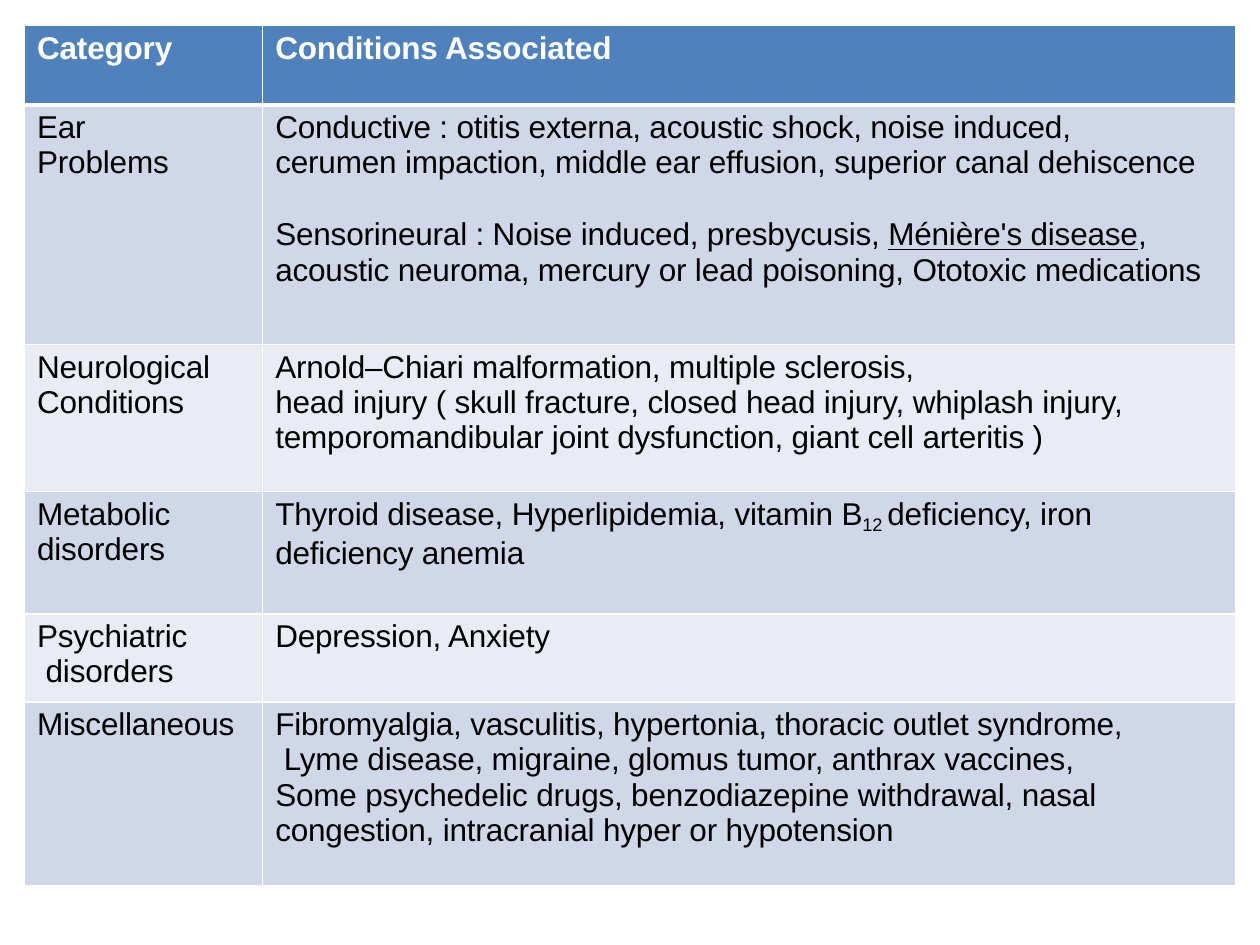
"""Build a slide with a table of categories and their associated conditions."""
from lxml import etree
from pptx import Presentation
from pptx import util as u
from pptx.dml.color import RGBColor
from pptx.oxml.ns import qn

Pt = u.Pt


def paint(fill, tone):
    fill.solid()
    fill.fore_color.rgb = RGBColor.from_string(tone)


def edge(cell, side, width):
    line = etree.SubElement(cell._tc.get_or_add_tcPr(), qn("a:ln" + side), w=str(Pt(width)))
    fill = etree.SubElement(line, qn("a:solidFill"))
    etree.SubElement(fill, qn("a:srgbClr"), val="FFFFFF")


rows = [
    (45.4, "Category", "Conditions Associated"),
    (136.8, "Ear\nProblems",
     "Conductive : otitis externa, acoustic shock, noise induced,\n"
     "cerumen impaction, middle ear effusion, superior canal dehiscence\n"
     "Sensorineural : Noise induced, presbycusis, |Ménière's disease|,|\v|"
     "acoustic neuroma, mercury or lead poisoning, Ototoxic medications"),
    (84.2, "Neurological\nConditions",
     "Arnold–Chiari malformation, multiple sclerosis,\n"
     "head injury ( skull fracture, closed head injury, whiplash injury,\n"
     "temporomandibular joint dysfunction, giant cell arteritis )"),
    (69.8, "Metabolic\ndisorders",
     "Thyroid disease, Hyperlipidemia, vitamin B|12 |deficiency, iron\n"
     "deficiency anemia"),
    (50.4, "Psychiatric|\v| disorders", "Depression, Anxiety"),
    (105.1, "Miscellaneous",
     "Fibromyalgia, vasculitis, hypertonia, thoracic outlet syndrome,|\v|"
     " Lyme disease, migraine, glomus tumor, anthrax vaccines,|\v|"
     "Some psychedelic drugs, benzodiazepine withdrawal, nasal|\v|"
     "congestion, intracranial hyper or hypotension"),
]
cols = [136.1, 555.8]

deck = Presentation()
deck.slide_width, deck.slide_height = Pt(720), Pt(540)
slide = deck.slides.add_slide(deck.slide_layouts[6])
high = sum(row[0] for row in rows)
grid = slide.shapes.add_table(len(rows), 2, Pt(14), Pt(14.6), Pt(sum(cols)), Pt(high)).table
for col, width in zip(grid.columns, cols):
    col.width = Pt(width)

for i, (tall, *texts) in enumerate(rows):
    grid.rows[i].height = Pt(tall)
    head = i == 0
    tone = "4F81BC" if head else ("E9ECF4", "D0D7E8")[i % 2]
    for j, words in enumerate(texts):
        cell = grid.cell(i, j)
        cell.margin_left, cell.margin_top = Pt(7.2), Pt(2.9)
        cell.margin_right = cell.margin_bottom = 0
        for side in "LRTB":
            thick = (head and side == "B") or (i == 1 and side == "T")
            edge(cell, side, 3 if thick else 1)
        paint(cell.fill, tone)
        frame = cell.text_frame
        for n, part in enumerate(words.split("\n")):
            para = frame.add_paragraph() if n else frame.paragraphs[0]
            gap = 0 if n else 3.1
            para.space_before = Pt(21 if part.startswith("Sensor") else gap)
            for piece in part.split("|"):
                if piece == "\v":
                    para.add_line_break()
                    continue
                run = para.add_run()
                run.text = piece
                font = run.font
                font.name, font.size, font.bold = "Arial", Pt(18), head
                paint(font.fill, "FFFFFF" if head else "000000")
                font.underline = piece.startswith("Ménière")
                props = run._r.get_or_add_rPr()
                props.set("spc", "-10")
                if piece == "12 ":
                    props.set("baseline", "-21000")

deck.save("out.pptx")
